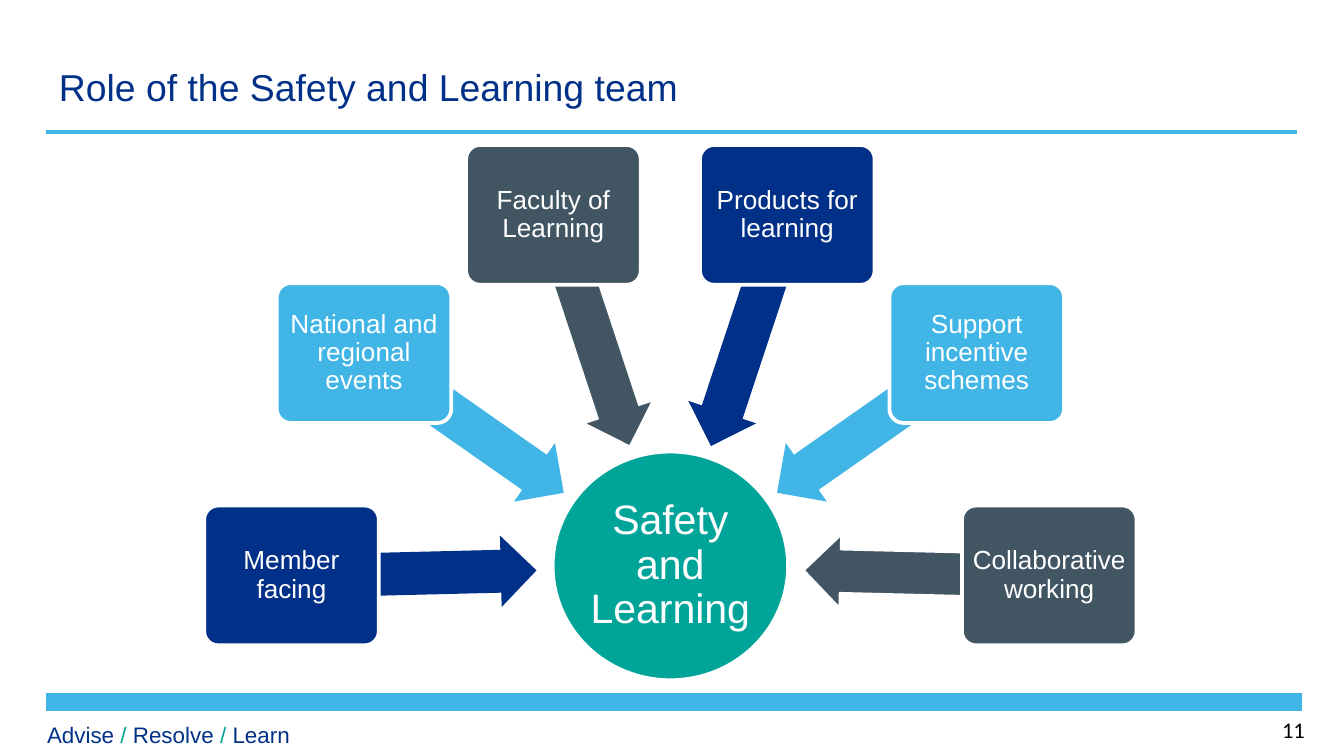
from lxml import etree
from pptx import Presentation
from pptx.dml.color import RGBColor
from pptx.enum.shapes import MSO_CONNECTOR as CONNECTOR, MSO_SHAPE as SHAPE
from pptx.enum.text import MSO_ANCHOR as ANCHOR, PP_ALIGN as ALIGN
from pptx.oxml.ns import qn
from pptx.util import Cm, Pt

NAVY, SKY, SLATE = "003087", "41B6E6", "425563"
TEAL, FOOTER_TEAL, WHITE, BLACK = "00A499", "00A291", "FFFFFF", "000000"
CENTRE_X = 12.67
CARD_WIDTH, CARD_HEIGHT = 3.3, 2.64
ARROW_LENGTH, ARROW_HEIGHT = 4.6, 1.35


def style_text(run, size, color, name="Arial"):
    run.font.size = Pt(size)
    run.font.name = name
    run.font.color.rgb = RGBColor.from_string(color)


def add_filled(kind, centre_x, centre_y, width, height, fill, line_width, text="", size=14, margin=0.08):
    shape = slide.shapes.add_shape(
        kind, Cm(centre_x - width / 2), Cm(centre_y - height / 2), Cm(width), Cm(height))
    shape.shadow.inherit = False
    shape.fill.solid()
    shape.fill.fore_color.rgb = RGBColor.from_string(fill)
    if line_width:
        shape.line.color.rgb = RGBColor.from_string(WHITE)
        shape.line.width = Pt(line_width)
    else:
        shape.line.fill.background()
    if text:
        frame = shape.text_frame
        frame.margin_left = frame.margin_right = Cm(margin)
        frame.margin_top = frame.margin_bottom = Cm(margin)
        frame.word_wrap = True
        frame.vertical_anchor = ANCHOR.MIDDLE
        frame.text = text
        paragraph = frame.paragraphs[0]
        paragraph.alignment = ALIGN.CENTER
        paragraph.line_spacing = 0.9
        style_text(paragraph.runs[0], size, WHITE)
    return shape


presentation = Presentation()
presentation.slide_width, presentation.slide_height = Cm(25.4), Cm(14.28)
slide = presentation.slides.add_slide(presentation.slide_layouts[5])

title = slide.shapes.title
title.left, title.top, title.width, title.height = Cm(0.86), Cm(0.94), Cm(19.23), Cm(1.4)
title.text_frame.text = "Role of the Safety and Learning team"
title.text_frame.vertical_anchor = ANCHOR.MIDDLE
title.text_frame.paragraphs[0].alignment = ALIGN.LEFT
style_text(title.text_frame.paragraphs[0].runs[0], 20, NAVY)

for right, y, width in [(24.51, 2.49, 2), (24.61, 13.26, 10)]:
    rule = slide.shapes.add_connector(CONNECTOR.STRAIGHT, Cm(0.86), Cm(y), Cm(right), Cm(y))
    rule.line.color.rgb = RGBColor.from_string(SKY)
    rule.line.width = Pt(width)
    etree.SubElement(rule.element.spPr, qn("a:effectLst"))

footer_runs = [("Advise ", NAVY), ("/", FOOTER_TEAL), (" Resolve ", NAVY),
               ("/", FOOTER_TEAL), (" Learn", NAVY)]
footers = [(0.64, 13.49, 6.3, "Arial", footer_runs),
           (23.98, 13.41, 1.4, "Calibri", [("11", BLACK)])]
for left, top, width, font_name, parts in footers:
    box = slide.shapes.add_textbox(Cm(left), Cm(top), Cm(width), Cm(0.76))
    box.text_frame.word_wrap = True
    for text, color in parts:
        run = box.text_frame.paragraphs[0].add_run()
        run.text = text
        style_text(run, 12, color, font_name)

add_filled(SHAPE.OVAL, CENTRE_X, 10.69, 4.45, 4.32, TEAL, 2, "Safety and Learning", 22, 0.05)

tiers = [
    (7.16, 10.87, 4.83, 10.83, 1.4, ("Member facing", NAVY), ("Collaborative working", SLATE)),
    (5.79, 6.67, 3.9, 7.99, -35, ("National and regional events", SKY), ("Support incentive schemes", SKY)),
    (2.21, 4.06, 1.49, 6.24, -71.7, ("Faculty of Learning", SLATE), ("Products for learning", NAVY)),
]
for card_offset, card_y, arrow_offset, arrow_y, angle, left_card, right_card in tiers:
    for side, rotation, (text, color) in [(-1, 180 - angle, left_card), (1, angle, right_card)]:
        arrow = add_filled(SHAPE.LEFT_ARROW, CENTRE_X + side * arrow_offset, arrow_y,
                           ARROW_LENGTH, ARROW_HEIGHT, color, 0.75 if color == SLATE else 0)
        arrow.adjustments[0] = 0.6
        arrow.adjustments[1] = 0.5
        arrow.rotation = rotation
        card = add_filled(SHAPE.ROUNDED_RECTANGLE, CENTRE_X + side * card_offset, card_y,
                          CARD_WIDTH, CARD_HEIGHT, color, 2, text)
        card.adjustments[0] = 0.1

presentation.save("out.pptx")
